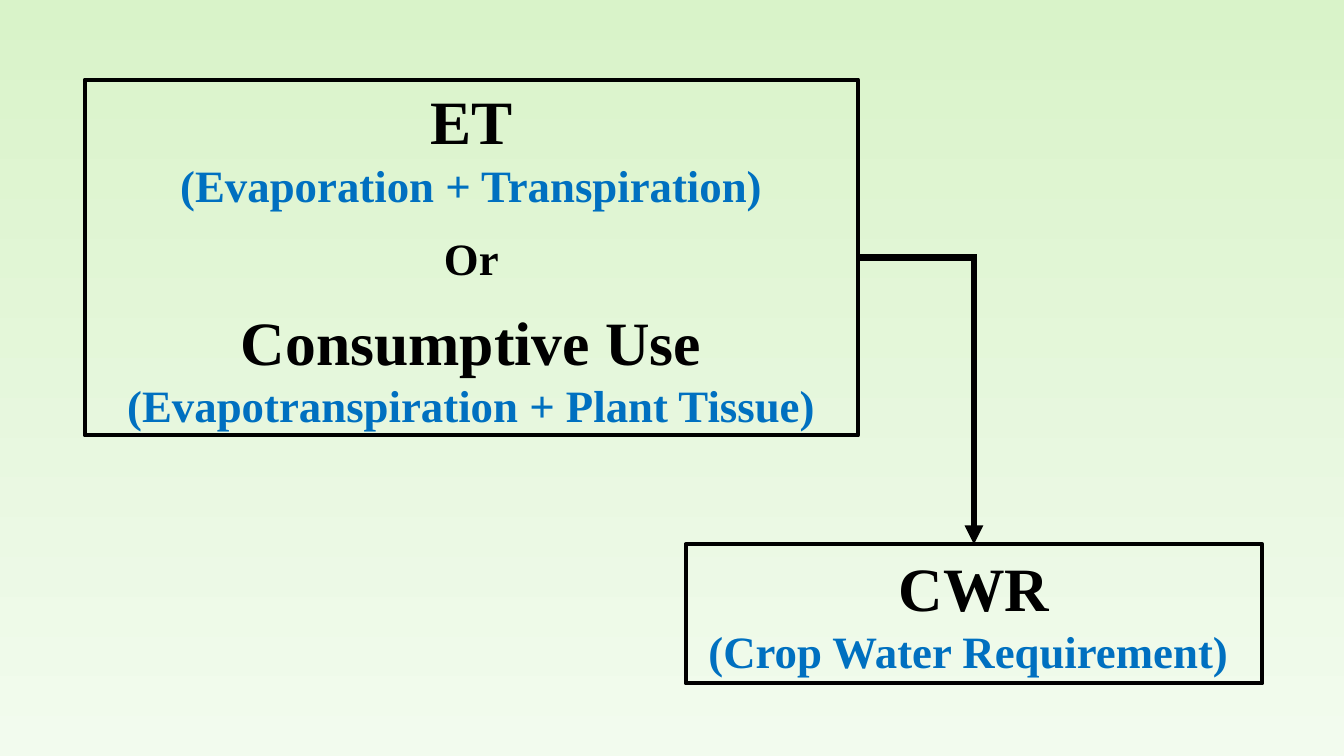
from lxml.etree import SubElement
from pptx import Presentation
from pptx.dml.color import RGBColor
from pptx.enum.shapes import MSO_CONNECTOR, MSO_SHAPE
from pptx.enum.text import MSO_ANCHOR, PP_ALIGN
from pptx.oxml.ns import qn
from pptx.util import Inches, Pt

FONT = "Times New Roman"
BLACK, BLUE = "000000", "0070C0"
TERM = (44, BLACK)
MEANING = (32, BLUE)
JOINER = (32, BLACK)


def rgb(value):
    return RGBColor.from_string(value)


def add_rect(s, left, top, width, height):
    sp = s.shapes.add_shape(MSO_SHAPE.RECTANGLE, Inches(left), Inches(top),
                            Inches(width), Inches(height))
    sp.shadow.inherit = False
    return sp


def add_backdrop(s, top_color, bottom_color):
    sp = add_rect(s, 0, 0, 13.33, 7.5)
    sp.line.fill.background()
    sp.fill.gradient()
    sp.fill.gradient_angle = 270
    for stop, color, position in zip(sp.fill.gradient_stops, (top_color, bottom_color), (0, 1)):
        stop.color.rgb = rgb(color)
        stop.position = position


def add_box(s, left, top, width, height, lines):
    """Outlined box; each line is (text, (size, colour), space around)."""
    sp = add_rect(s, left, top, width, height)
    sp.fill.background()
    sp.line.color.rgb = rgb(BLACK)
    sp.line.width = Pt(3)
    tf = sp.text_frame
    tf.word_wrap = True
    tf.vertical_anchor = MSO_ANCHOR.MIDDLE
    for i, (text, (size, color), gap) in enumerate(lines):
        p = tf.paragraphs[0] if i == 0 else tf.add_paragraph()
        p.alignment = PP_ALIGN.CENTER
        p.space_before = p.space_after = Pt(gap)
        r = p.add_run()
        r.text = text
        r.font.name = FONT
        r.font.size = Pt(size)
        r.font.bold = True
        r.font.color.rgb = rgb(color)
    return sp


def add_elbow_arrow(s, source, target):
    """One-bend arrow from the right of source to the top of target."""
    cxn = s.shapes.add_connector(MSO_CONNECTOR.ELBOW, 0, 0, 0, 0)
    cxn.begin_connect(source, 3)
    cxn.end_connect(target, 0)
    cxn.line.color.rgb = rgb(BLACK)
    cxn.line.width = Pt(4.5)
    spPr = cxn._element.spPr
    spPr.find(qn("a:prstGeom")).set("prst", "bentConnector2")
    ln = spPr.find(qn("a:ln"))
    SubElement(ln, qn("a:miter"), lim="800000")
    SubElement(ln, qn("a:tailEnd"), type="triangle")
    SubElement(spPr, qn("a:effectLst"))


def main():
    prs = Presentation()
    prs.slide_width, prs.slide_height = Inches(13.33), Inches(7.5)
    s = prs.slides.add_slide(prs.slide_layouts[6])
    add_backdrop(s, "D9F3C9", "F2FBEE")
    water_use = add_box(s, 0.84, 0.79, 7.67, 3.53, [
        ("ET", TERM, 0),
        ("(Evaporation + Transpiration)", MEANING, 0),
        ("Or", JOINER, 14),
        ("Consumptive Use", TERM, 0),
        ("(Evapotranspiration + Plant Tissue)", MEANING, 0),
    ])
    requirement = add_box(s, 6.8, 5.4, 5.72, 1.38, [
        ("CWR", TERM, 0),
        ("(Crop Water Requirement) ", MEANING, 0),
    ])
    add_elbow_arrow(s, water_use, requirement)
    prs.save("out.pptx")


if __name__ == "__main__":
    main()
